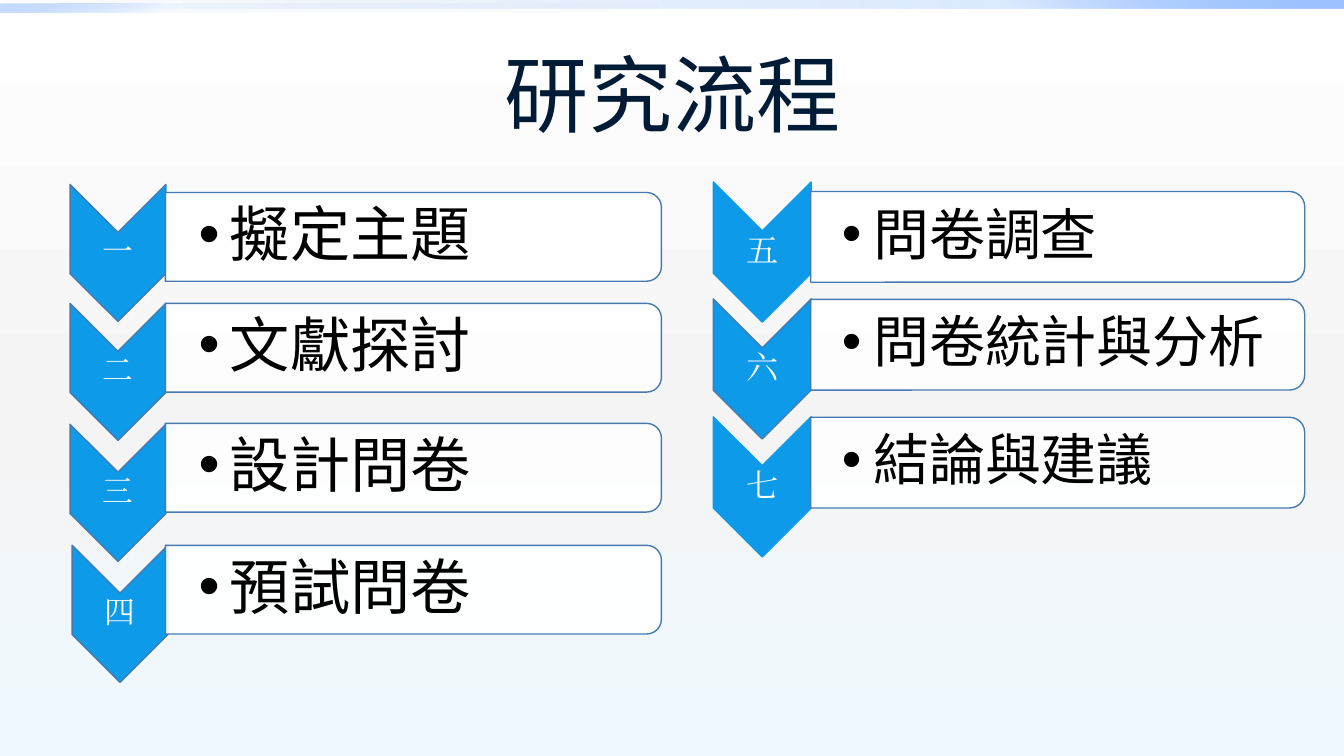
"""Build the research process slide with two columns of numbered steps."""
from lxml.etree import SubElement
from pptx import Presentation
from pptx.dml.color import RGBColor
from pptx.enum.shapes import MSO_SHAPE as Preset
from pptx.enum.text import MSO_ANCHOR as Anchor, PP_ALIGN as Align
from pptx.oxml.ns import qn
from pptx.util import Inches, Pt

WHITE = RGBColor(0xFF, 0xFF, 0xFF)
BLACK = RGBColor(0x00, 0x00, 0x00)
NAVY = RGBColor(0x00, 0x1B, 0x36)
SKY = RGBColor(0x0D, 0x9B, 0xE9)
STEEL = RGBColor(0x47, 0x7A, 0xB1)
LIGHT_GREY = RGBColor(0xF4, 0xF4, 0xF4)
ICE = RGBColor(0xEE, 0xF9, 0xFF)
DEEP_BLUE = RGBColor(0x00, 0x58, 0xB7)
BLUE = RGBColor(0x4F, 0x95, 0xFF)
PALE_BLUE = RGBColor(0x9E, 0xC2, 0xFF)
CJK = "Noto Sans CJK SC"


def set_gradient(properties, stops, angle):
    solid = properties.find(qn("a:solidFill"))
    gradient = SubElement(properties, qn("a:gradFill"), rotWithShape="1")
    properties.replace(solid, gradient)
    stop_list = SubElement(gradient, qn("a:gsLst"))
    for position, color, opacity in stops:
        stop = SubElement(stop_list, qn("a:gs"), pos=str(position * 1000))
        tint = SubElement(stop, qn("a:srgbClr"), val=str(color))
        SubElement(tint, qn("a:alpha"), val=str(opacity * 1000))
    SubElement(gradient, qn("a:lin"), ang=str(angle * 60000), scaled="0")


def add_text(shapes, place, text, font, size, color, insets, bullet=False, spacing=0.9):
    box = shapes.add_textbox(*map(Inches, place))
    frame = box.text_frame
    frame.word_wrap = True
    frame.vertical_anchor = Anchor.MIDDLE
    for side, inset in zip(("left", "top", "right", "bottom"), insets):
        setattr(frame, f"margin_{side}", Inches(inset))
    para = frame.paragraphs[0]
    para.line_spacing = spacing
    para.alignment = Align.LEFT if bullet else Align.CENTER
    if bullet:
        para.level = 1
        layout = para._p.get_or_add_pPr()
        layout.set("marL", str(Inches(0.31)))
        layout.set("indent", str(Inches(-0.31)))
        SubElement(layout, qn("a:buFont"), typeface="Arial")
        SubElement(layout, qn("a:buChar"), char="•")
    span = para.add_run()
    span.text = text
    span.font.name = font
    span.font.size = Pt(size)
    span.font.color.rgb = color
    latin = span.font._element.find(qn("a:latin"))
    east_asian = SubElement(span.font._element, qn("a:ea"), typeface=font)
    latin.addnext(east_asian)


deck = Presentation()
deck.slide_width = Inches(13.33)
deck.slide_height = Inches(7.5)
slide = deck.slides.add_slide(deck.slide_layouts[6])

slide.background.fill.solid()
set_gradient(slide.element.find(".//" + qn("p:bgPr")),
             [(0, WHITE, 100), (55, LIGHT_GREY, 100), (100, ICE, 100)], 90)

for top, width, middle_opacity, end_opacity, angle in [
    (0, 13.33, 20, 100, 315),
    (0.04, 6.67, 5, 60, 225),
]:
    bar = slide.shapes.add_shape(Preset.RECTANGLE, 0, Inches(top), Inches(width), Inches(0.08))
    bar.shadow.inherit = False
    bar.line.fill.background()
    bar.fill.solid()
    set_gradient(bar._element.spPr,
                 [(0, DEEP_BLUE, 0), (75, BLUE, middle_opacity),
                  (100, PALE_BLUE, end_opacity)], angle)

add_text(slide.shapes, (0.67, 0.3, 12, 1.25), "研究流程", CJK, 60, NAVY,
         (0.1, 0.05, 0.1, 0.05), spacing=1)

columns = [
    {
        "chevron": (1.36, 0.95), "panel": (0.88, 4.92), "panel_x": 4.1,
        "text": (1.64, 4.88, 0.8), "inset": 0.33, "sizes": (22, 43),
        "steps": [
            ("一", "擬定主題", 1.17, 2.51, 2.35, STEEL),
            ("二", "文獻探討", 1.17, 3.69, 3.45, STEEL),
            ("三", "設計問卷", 1.17, 4.89, 4.64, STEEL),
            ("四", "預試問卷", 1.19, 6.09, 5.85, STEEL),
        ],
    },
    {
        "chevron": (1.39, 0.97), "panel": (0.9, 4.9), "panel_x": 10.49,
        "text": (8.04, 4.85, 0.81), "inset": 0.31, "sizes": (23, 40),
        "steps": [
            ("五", "問卷調查", 7.56, 2.5, 2.35, SKY),
            ("六", "問卷統計與分析", 7.56, 3.66, 3.42, STEEL),
            ("七", "結論與建議", 7.56, 4.83, 4.59, SKY),
        ],
    },
]

for column in columns:
    shapes = slide.shapes.add_group_shape().shapes
    length, breadth = column["chevron"]
    text_left, text_width, text_height = column["text"]
    number_size, step_size = column["sizes"]
    for number, step, chevron_x, chevron_y, panel_y, edge in column["steps"]:
        number_height = length - breadth
        number_place = (chevron_x - breadth / 2, chevron_y - number_height / 2,
                        breadth, number_height)
        text_place = (text_left, panel_y - text_height / 2, text_width, text_height)
        for preset, size, center, color, outline in [
            (Preset.CHEVRON, column["chevron"], (chevron_x, chevron_y), SKY, edge),
            (Preset.ROUND_2_SAME_RECTANGLE, column["panel"],
             (column["panel_x"], panel_y), WHITE, STEEL),
        ]:
            left, top = (middle - extent / 2 for middle, extent in zip(center, size))
            shape = shapes.add_shape(preset, *map(Inches, (left, top, *size)))
            shape.rotation = 90
            shape.shadow.inherit = False
            shape.fill.solid()
            shape.fill.fore_color.rgb = color
            shape.line.color.rgb = outline
            shape.line.width = Pt(1)
            if preset == Preset.CHEVRON:
                add_text(shapes, number_place, number, "Cambria", number_size, WHITE, (0.02,) * 4)
            else:
                tint = shape._element.spPr.find(qn("a:solidFill"))[0]
                SubElement(tint, qn("a:alpha"), val="90000")
                add_text(shapes, text_place, step, CJK, step_size, BLACK,
                         (column["inset"], 0.03, 0.03, 0.03), bullet=True)

deck.save("out.pptx")
